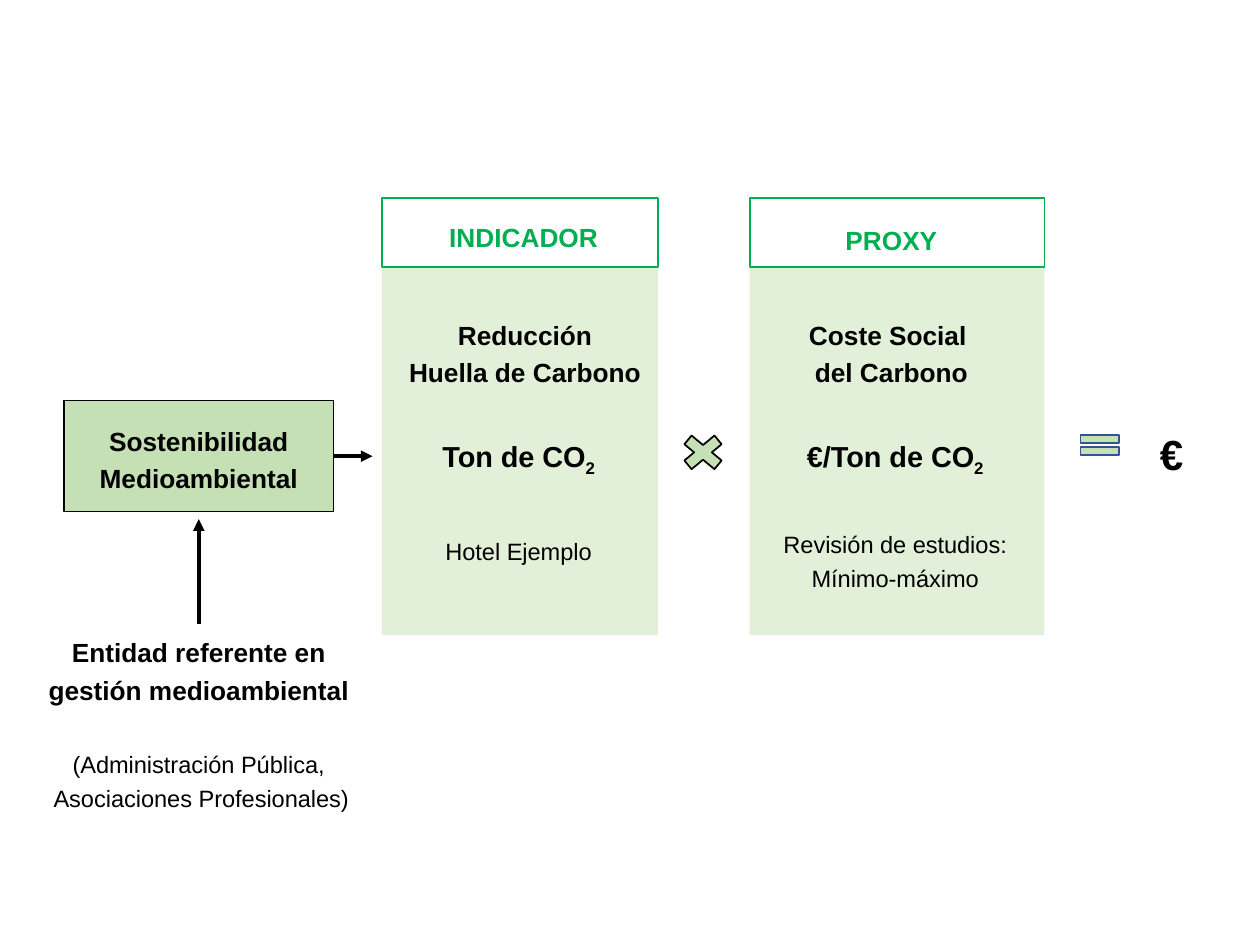
from lxml.etree import SubElement
from pptx import Presentation
from pptx.dml.color import RGBColor
from pptx.enum.shapes import MSO_CONNECTOR, MSO_SHAPE
from pptx.enum.text import MSO_ANCHOR, PP_ALIGN
from pptx.oxml.ns import qn
from pptx.util import Pt

COLORS = {
    "panel": "E2F0D9",
    "accent": "C5E0B4",
    "heading": "00B050",
    "equal_line": "325491",
    "black": "000000",
}
LABEL_W = 152


def rgb(name):
    return RGBColor.from_string(COLORS[name])


def write(tf, lines, size, bold=True, color="black"):
    """Fill a text frame with centred lines; a line is a string or (base, subscript)."""
    tf.word_wrap = True
    for i, line in enumerate(lines):
        p = tf.paragraphs[0] if i == 0 else tf.add_paragraph()
        p.alignment = PP_ALIGN.CENTER
        p.line_spacing = 1.2
        p.font.name = "Arial"
        p.font.size = Pt(size)
        p.font.bold = bold
        p.font.color.rgb = rgb(color)
        base, sub = (line, "") if isinstance(line, str) else line
        p.add_run().text = base
        if sub:
            r = p.add_run()
            r.text = sub
            r.font._element.set("baseline", "-25000")


def add_label(s, x, y, w, h, lines, size, bold=True, color="black"):
    tb = s.shapes.add_textbox(Pt(x), Pt(y), Pt(w), Pt(h))
    write(tb.text_frame, lines, size, bold, color)


def add_block(s, kind, x, y, w, h, fill=None, line=None, width=1):
    sp = s.shapes.add_shape(kind, Pt(x), Pt(y), Pt(w), Pt(h))
    sp.shadow.inherit = False
    if fill:
        sp.fill.solid()
        sp.fill.fore_color.rgb = rgb(fill)
    else:
        sp.fill.background()
    if line:
        sp.line.color.rgb = rgb(line)
        sp.line.width = Pt(width)
    else:
        sp.line.fill.background()
    return sp


def add_arrow(s, x1, y1, x2, y2):
    """Draw a line with its arrowhead at the second point."""
    c = s.shapes.add_connector(MSO_CONNECTOR.STRAIGHT, Pt(x1), Pt(y1), Pt(x2), Pt(y2))
    c.line.color.rgb = rgb("black")
    c.line.width = Pt(2.25)
    SubElement(c.line._get_or_add_ln(), qn("a:tailEnd"), type="triangle")
    SubElement(c._element.spPr, qn("a:effectLst"))


def add_source(s, x, y, w):
    """Place the sustainability box with the reference entity below it."""
    box_w, box_h = 154, 63.4
    box_x = x + (w - box_w) / 2
    sp = add_block(s, MSO_SHAPE.RECTANGLE, box_x, y, box_w, box_h, "accent", "black", 0.75)
    sp.text_frame.vertical_anchor = MSO_ANCHOR.MIDDLE
    write(sp.text_frame, ["Sostenibilidad Medioambiental"], 15)
    mid = x + w / 2
    add_arrow(s, mid, y + 127.5, mid, y + 67.7)
    add_arrow(s, box_x + box_w, y + 31.7, box_x + box_w + 22.3, y + 31.7)
    add_label(s, x, y + 127.5, w, 49, ["Entidad referente en gestión medioambiental"], 15)
    add_label(s, x, y + 193, w, 44.6,
              ["(Administración Pública,", " Asociaciones Profesionales)"], 13.5, bold=False)


def add_card(s, x, y, w, heading, concept, unit, source):
    """Place a panel with a framed heading; each text is (dx, dy, lines)."""
    head_h, body_h = 39.6, 210.4
    add_block(s, MSO_SHAPE.RECTANGLE, x, y + head_h, w, body_h, "panel")
    add_block(s, MSO_SHAPE.RECTANGLE, x, y, w, head_h, line="heading")
    styles = ((27.4, 15, True, "heading"), (49, 15, True, "black"),
              (28.8, 16.5, True, "black"), (44.6, 13.5, False, "black"))
    for (dx, dy, lines), (h, *style) in zip((heading, concept, unit, source), styles):
        add_label(s, x + dx, y + dy, LABEL_W, h, lines, *style)


def add_result(s, x, y):
    add_block(s, MSO_SHAPE.MATH_EQUAL, x, y, 30.2, 19.4, "accent", "equal_line")
    add_label(s, x + 33.1, y - 9.4, 46, 38.9, ["€"], 24)


def main():
    prs = Presentation()
    prs.slide_width, prs.slide_height = Pt(720), Pt(540)
    s = prs.slides.add_slide(prs.slide_layouts[6])
    add_source(s, 19.6, 229, 188)
    add_card(s, 218.2, 113, 157.7,
             (5, 6.5, ["INDICADOR"]),
             (5.8, 62, ["Reducción", "Huella de Carbono"]),
             (2.2, 129.6, [("Ton de CO", "2")]),
             (2.2, 187.2, ["Hotel Ejemplo"]))
    add_block(s, MSO_SHAPE.MATH_MULTIPLY, 385.2, 244.8, 33.1, 27.4, "accent", "black")
    add_card(s, 428.4, 113, 168.5,
             (5, 8, ["PROXY"]),
             (5, 62, ["Coste Social ", "del Carbono"]),
             (7.2, 129.6, [("€/Ton de CO", "2")]),
             (7.2, 183, ["Revisión de estudios:", "Mínimo-máximo"]))
    add_result(s, 613.4, 244.8)
    prs.save("out.pptx")


if __name__ == "__main__":
    main()
